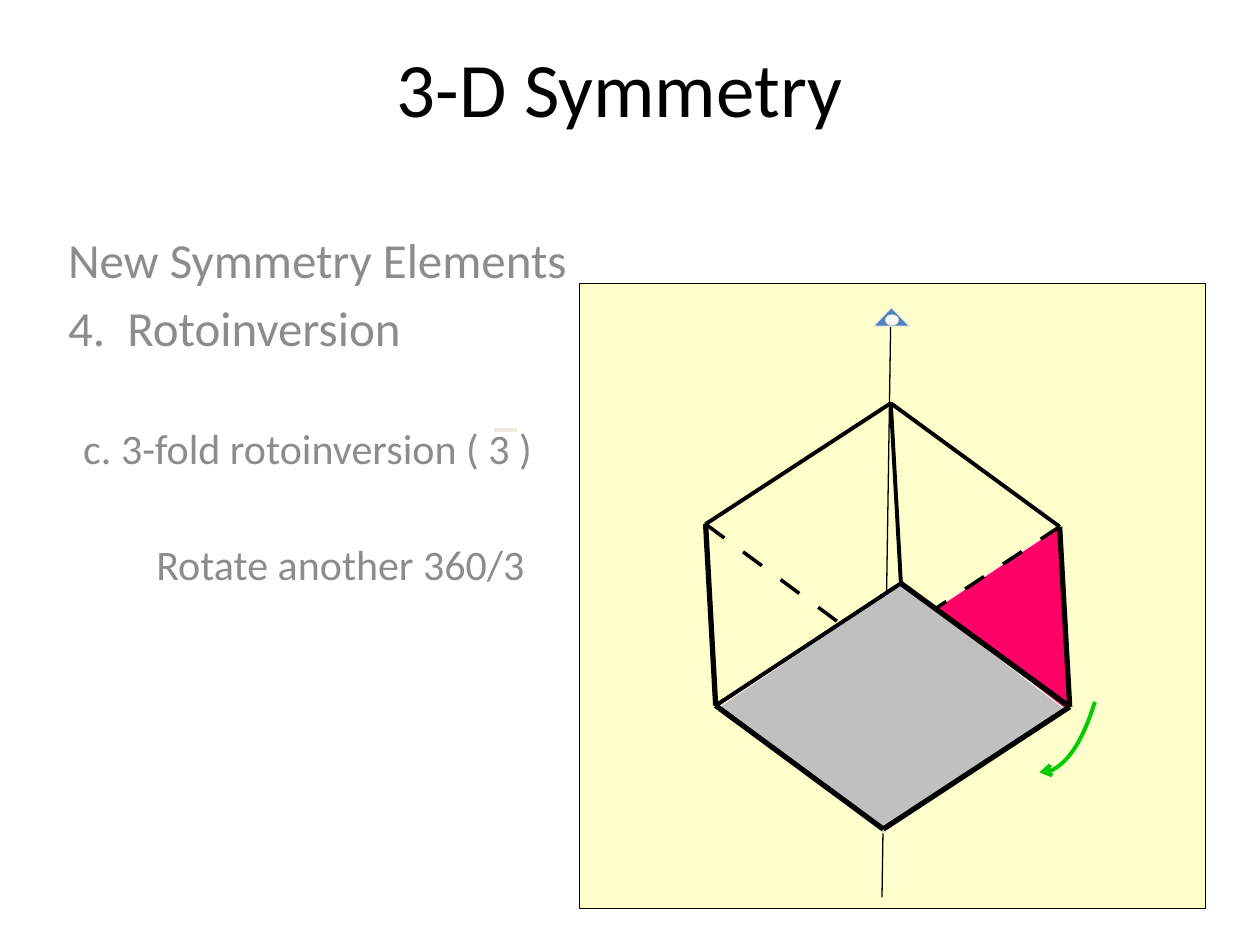
from lxml.etree import SubElement
from pptx import Presentation
from pptx.dml.color import RGBColor
from pptx.enum.shapes import MSO_CONNECTOR, MSO_SHAPE
from pptx.enum.text import MSO_ANCHOR, PP_ALIGN
from pptx.oxml.ns import qn
from pptx.util import Inches, Pt

INK = {
    "black": "000000", "grey": "8C8C8C", "cream": "FFFFCC", "pink": "FF0066",
    "pale": "EEECE1", "green": "00CC00", "blue": "4F81BD", "white": "FFFFFF",
    "silver": "C0C0C0",
}

CUBE = {
    "top": (7.07, 3.2), "left": (5.6, 4.16), "right": (8.41, 4.18),
    "front": (7.15, 4.63), "back": (6.94, 5.15), "west": (5.68, 5.6),
    "east": (8.49, 5.61), "base": (7.01, 6.58),
}


def color(name):
    return RGBColor.from_string(INK[name])


def apply(item, values):
    for name, value in values.items():
        setattr(item, name, value)


def place(item, left, top, width, height):
    apply(item, {"left": Inches(left), "top": Inches(top),
                 "width": Inches(width), "height": Inches(height)})


def paint(shape, fill, line, width=0.75):
    shape.shadow.inherit = False
    if fill:
        shape.fill.solid()
        shape.fill.fore_color.rgb = color(fill)
    else:
        shape.fill.background()
    shape.line.color.rgb = color(line)
    shape.line.width = Pt(width)


def add_form(shapes, kind, box, fill, line):
    shape = shapes.add_shape(kind, *map(Inches, box))
    paint(shape, fill, line)
    return shape


def add_line(shapes, start, end, width, ink="black"):
    line = shapes.add_connector(MSO_CONNECTOR.STRAIGHT, *map(Inches, start + end))
    line.line.color.rgb = color(ink)
    line.line.width = Pt(width)
    SubElement(line._element.spPr, qn("a:effectLst"))


def add_dashes(shapes, start, end, count, parts):
    def point(step):
        return tuple(a + (b - a) * step / parts for a, b in zip(start, end))

    for step in range(0, 2 * count, 2):
        add_line(shapes, point(step), point(step + 1), 0)


def add_face(shapes, points, fill, line, width, close=True):
    first, *rest = [tuple(map(Inches, point)) for point in points]
    form = shapes.build_freeform(*first)
    form.add_line_segments(rest, close=close)
    shape = form.convert_to_shape()
    paint(shape, fill, line, width)
    return shape


def add_curve(shapes, points, ink, width):
    shape = add_face(shapes, points, None, ink, width, close=False)
    route = shape._element.xpath(".//a:path")[0]
    bend = SubElement(route, qn("a:cubicBezTo"))
    for part in route.findall(qn("a:lnTo")):
        bend.append(part[0])
        route.remove(part)
    SubElement(shape.line._get_or_add_ln(), qn("a:headEnd"), type="arrow")


def add_text(para, text, size, ink, align):
    run = para.add_run()
    run.text = text
    apply(run.font, {"name": "Calibri", "size": Pt(size)})
    run.font.color.rgb = color(ink)
    para.alignment = align


def add_title(slide):
    title = slide.shapes.title
    place(title, 0.67, 0, 8.5, 1.37)
    title.text_frame.vertical_anchor = MSO_ANCHOR.MIDDLE
    add_text(title.text_frame.paragraphs[0], "3-D Symmetry", 44, "black", PP_ALIGN.CENTER)


def add_list(slide):
    body = slide.placeholders[1]
    place(body, 0.44, 1.77, 4.32, 4.49)
    frame = body.text_frame
    items = [
        ("New Symmetry Elements", 28, 0, 0, 0, None),
        ("4.  Rotoinversion", 28, 0, 0, 0, None),
        ("c. 3-fold rotoinversion ( 3 )", 24, 1, 0.57, -0.45, 37.6),
        ("Rotate another 360/3", 24, 2, 0.88, -0.18, 37.6),
    ]
    for row, (text, size, level, margin, indent, gap) in enumerate(items):
        para = frame.add_paragraph() if row else frame.paragraphs[0]
        add_text(para, text, size, "grey", PP_ALIGN.LEFT)
        para.level = level
        if gap:
            para.space_before = Pt(gap)
        props = para._p.get_or_add_pPr()
        props.set("marL", str(Inches(margin)))
        props.set("indent", str(Inches(indent)))


def add_hidden(shapes):
    for end, count, parts in (("right", 5, 9.8), ("base", 4, 8), ("left", 5, 9)):
        ends = ("right", "back") if end == "right" else ("back", end)
        add_dashes(shapes, *(CUBE[name] for name in ends), count, parts)
    for start, end in (("east", "front"), ("east", "base"), ("front", "west")):
        add_line(shapes, CUBE[start], CUBE[end], 0)


def add_symbol(shapes):
    group = shapes.add_group_shape().shapes
    add_form(group, MSO_SHAPE.ISOSCELES_TRIANGLE, (6.93, 2.44, 0.29, 0.15), "blue", "pale")
    add_form(group, MSO_SHAPE.OVAL, (7.03, 2.5, 0.1, 0.08), "white", "pale")


def add_cube(shapes):
    group = shapes.add_group_shape().shapes
    face = [CUBE[name] for name in ("top", "front", "west", "left")]
    add_face(group, face, None, "black", 1.5)
    edges = [
        ("right", "east", 3), ("right", "top", 2.25), ("east", "front", 3),
        ("east", "base", 3), ("top", "front", 2.25), ("top", "left", 2.25),
        ("front", "west", 2.25), ("base", "west", 3), ("left", "west", 3),
    ]
    for start, end, width in edges:
        add_line(group, CUBE[start], CUBE[end], width)


def main():
    deck = Presentation()
    apply(deck, {"slide_width": Inches(10), "slide_height": Inches(7.5)})
    slide = deck.slides.add_slide(deck.slide_layouts[0])
    shapes = slide.shapes
    add_title(slide)
    add_list(slide)
    add_form(shapes, MSO_SHAPE.RECTANGLE, (4.6, 2.25, 4.97, 4.96), "cream", "black")
    face = [CUBE[name] for name in ("right", "east", "base", "back")]
    add_face(shapes, face, "pink", "pale", 0.75)
    add_hidden(shapes)
    add_line(shapes, (7.07, 2.51), (7, 7.12), 0.75)
    add_curve(shapes, [(8.25, 6.13), (8.38, 6.17), (8.58, 5.92), (8.69, 5.57)], "green", 2.25)
    add_symbol(shapes)
    floor = add_form(shapes, MSO_SHAPE.PARALLELOGRAM, (5.99, 4.79, 2.19, 1.66), "silver", "pale")
    floor.rotation = 37.7
    floor.adjustments[0] = 0.33
    add_cube(shapes)
    add_line(shapes, (3.92, 3.41), (4.1, 3.41), 2.25, "pale")
    deck.save("out.pptx")


if __name__ == "__main__":
    main()
